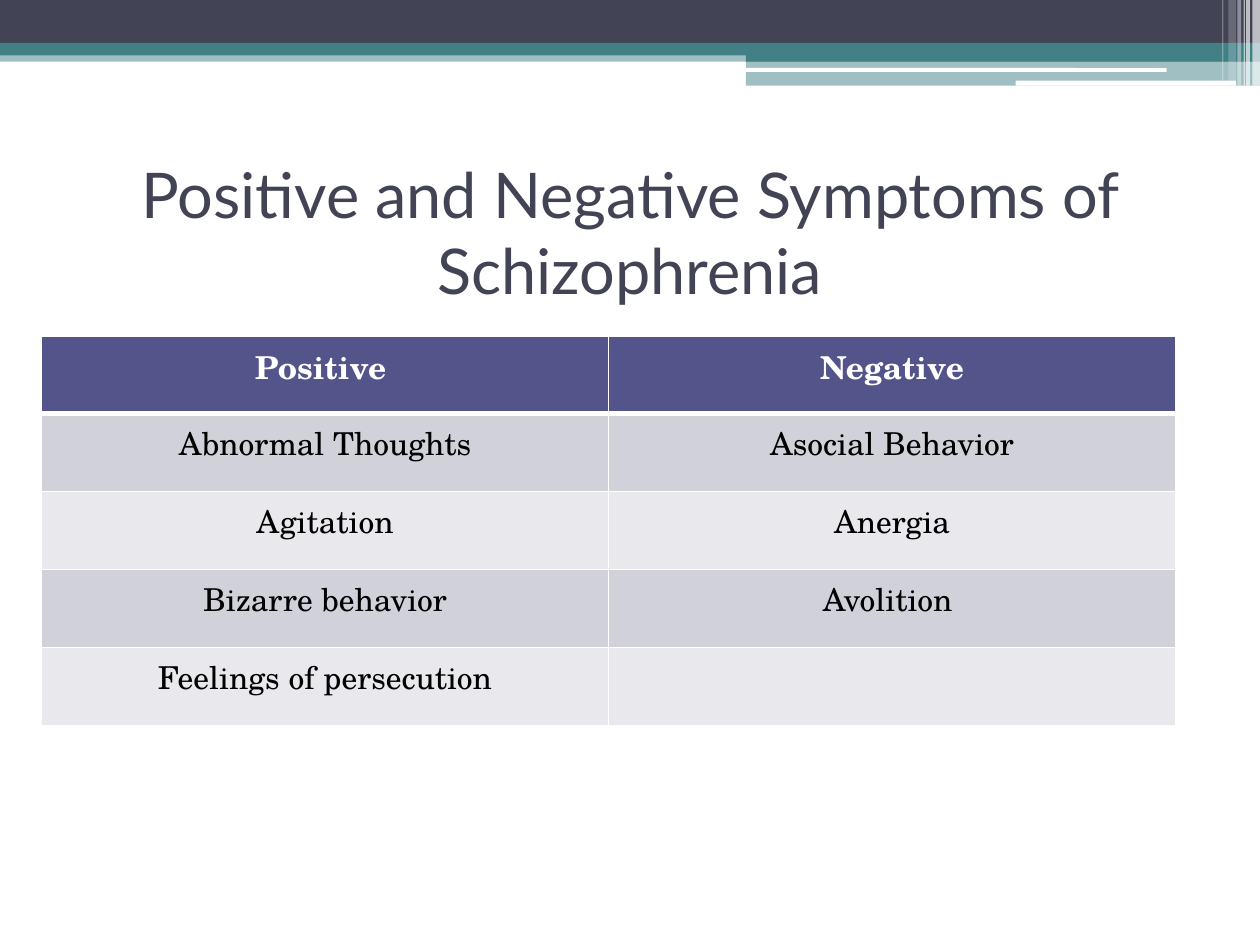
from lxml import etree
from pptx import Presentation
from pptx import util as u
from pptx.dml.color import RGBColor
from pptx.enum import shapes, text
from pptx.oxml.ns import qn

COLORS = {
    "slate": "424456", "teal": "438086", "white": "FFFFFF", "black": "000000",
    "header": "53548A", "odd_row": "D1D1DA", "even_row": "E9E9ED",
}
TITLE_FONT, TABLE_FONT = "Lato", "TeX Gyre Schola"
SYMPTOMS = [
    ("Positive ", "Negative"),
    ("Abnormal Thoughts", "Asocial Behavior"),
    ("Agitation", "Anergia"),
    ("Bizarre behavior", "Avolition "),
    ("Feelings of persecution", ""),
]


def rgb(name):
    return RGBColor.from_string(COLORS[name])


def style_paragraph(paragraph, font_name, size, color, bold=False):
    paragraph.alignment = text.PP_ALIGN.CENTER
    for run in paragraph.runs:
        run.font.name = font_name
        run.font.size = u.Pt(size)
        run.font.bold = bold
        run.font.color.rgb = rgb(color)


def add_bar(slide, left, top, width, height, color, opacity=100, rounded=False):
    kind = shapes.MSO_SHAPE.ROUNDED_RECTANGLE if rounded else shapes.MSO_SHAPE.RECTANGLE
    bar = slide.shapes.add_shape(kind, left, top, width, height)
    bar.shadow.inherit = False
    bar.line.fill.background()
    bar.fill.solid()
    bar.fill.fore_color.rgb = rgb(color)
    if opacity < 100:
        srgb = bar.fill._xPr.find(".//" + qn("a:srgbClr"))
        etree.SubElement(srgb, qn("a:alpha"), val=str(opacity * 1000))


def add_banner(slide, left, top, width):
    """Layered bands across the top, with pale stripes at the right edge."""
    bands = [  # x, y, width, height, color, opacity, rounded
        (0, 0.4, 10, 0.09, "teal", 50, False),
        (0, 0, 10, 0.34, "slate", 100, False),
        (0, 0.34, 10, 0.1, "teal", 100, False),
        (5.92, 0.39, 4.08, 0.1, "teal", 100, False),
        (5.92, 0.48, 4.08, 0.2, "teal", 50, False),
        (5.91, 0.54, 3.35, 0.03, "white", 100, True),
        (8.06, 0.64, 1.75, 0.04, "white", 100, True),
    ]
    for x, y, w, h, color, opacity, rounded in bands:
        add_bar(slide, left + u.Inches(x), top + u.Inches(y),
                u.Inches(w), u.Inches(h), color, opacity, rounded)

    stripes = [  # distance from right edge, width, height, opacity
        (0.06, 0.06, 0.68, 65), (0.11, 0.03, 0.68, 65), (0.13, 0.01, 0.68, 60),
        (0.18, 0.03, 0.68, 40), (0.25, 0.06, 0.64, 20), (0.3, 0.01, 0.64, 30),
    ]
    for inset, w, h, opacity in stripes:
        add_bar(slide, left + width - u.Inches(inset), top,
                u.Inches(w), u.Inches(h), "white", opacity)


def add_title(slide, left, top, width, height):
    frame = slide.shapes.add_textbox(left, top, width, height).text_frame
    frame.word_wrap = True
    frame.vertical_anchor = text.MSO_ANCHOR.MIDDLE
    frame.text = "Positive and Negative Symptoms of Schizophrenia"
    style_paragraph(frame.paragraphs[0], TITLE_FONT, 36, "slate")


def set_borders(cell, widths):
    properties = cell._tc.get_or_add_tcPr()
    for side, points in widths.items():
        line = etree.SubElement(properties, qn("a:ln" + side), w=str(u.Pt(points)))
        fill = etree.SubElement(line, qn("a:solidFill"))
        etree.SubElement(fill, qn("a:srgbClr"), val=COLORS["white"])


def add_symptom_table(slide, left, top, width, height):
    table = slide.shapes.add_table(
        len(SYMPTOMS), len(SYMPTOMS[0]), left, top, width, height).table
    for r, symptoms in enumerate(SYMPTOMS):
        is_header = r == 0
        table.rows[r].height = u.Inches(0.61 if is_header else 0.62)
        if is_header:
            fill = "header"
        else:
            fill = "odd_row" if r % 2 else "even_row"
        for c, symptom in enumerate(symptoms):
            cell = table.cell(r, c)
            cell.text = symptom
            style_paragraph(cell.text_frame.paragraphs[0], TABLE_FONT, 18,
                            "white" if is_header else "black", is_header)
            set_borders(cell, {"L": 1, "R": 1, "T": 3 if r == 1 else 1,
                               "B": 3 if is_header else 1})
            cell.fill.solid()
            cell.fill.fore_color.rgb = rgb(fill)


def main():
    deck = Presentation()
    deck.slide_width, deck.slide_height = u.Inches(10), u.Inches(7.5)
    slide = deck.slides.add_slide(deck.slide_layouts[6])
    add_banner(slide, u.Inches(0), u.Inches(0), deck.slide_width)
    add_title(slide, u.Inches(0.5), u.Inches(1.25), u.Inches(9), u.Inches(1.17))
    add_symptom_table(slide, u.Inches(0.33), u.Inches(2.67), u.Inches(9), u.Inches(3.08))
    deck.save("out.pptx")


if __name__ == "__main__":
    main()
